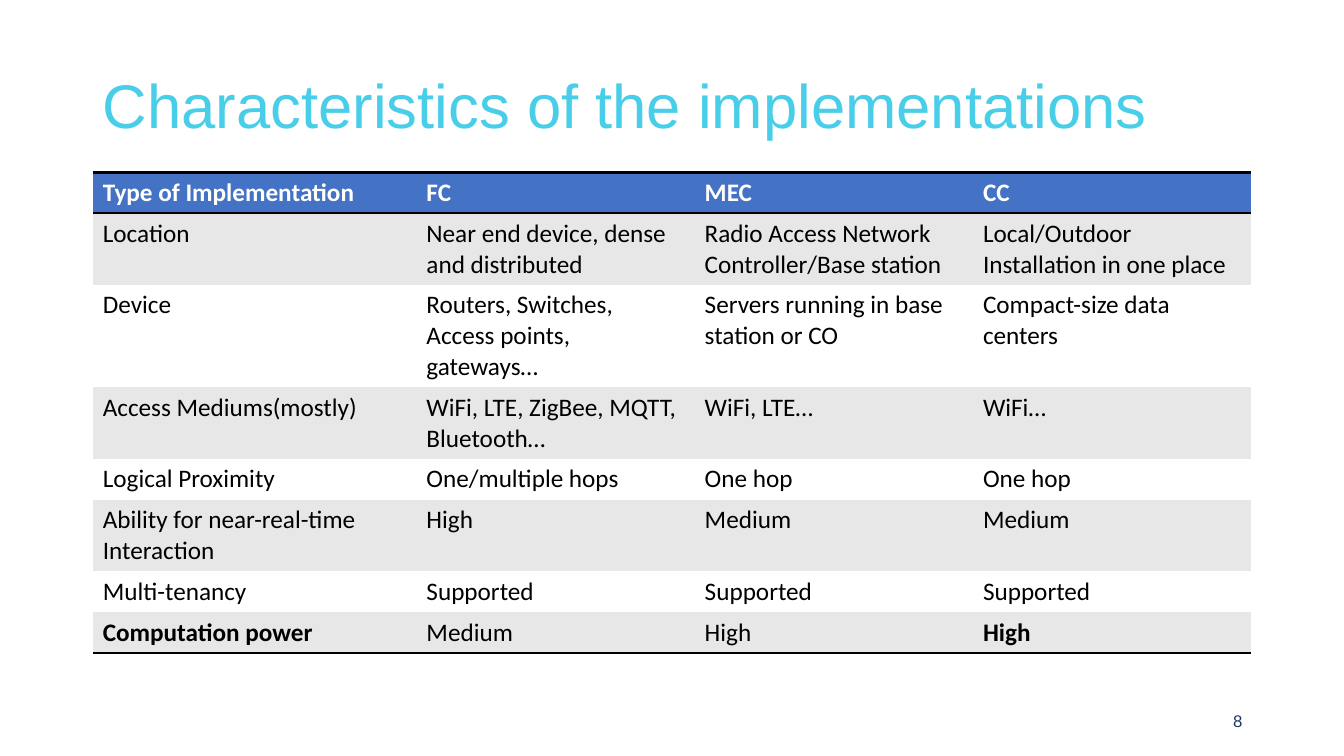
from lxml import etree
from pptx import Presentation
from pptx.dml.color import RGBColor
from pptx.enum.text import MSO_ANCHOR, MSO_AUTO_SIZE, PP_ALIGN
from pptx.oxml.ns import qn
from pptx.util import Inches, Pt

LEFT, RIGHT = PP_ALIGN.LEFT, PP_ALIGN.RIGHT
MIDDLE = MSO_ANCHOR.MIDDLE
NO_FIT = MSO_AUTO_SIZE.NONE
TITLE_ONLY = 5

ROWS = [
    ["Type of Implementation", "FC", "MEC", "CC"],
    ["Location", "Near end device, dense and distributed",
     "Radio Access Network Controller/Base station",
     "Local/Outdoor Installation in one place"],
    ["Device", "Routers, Switches, Access points, gateways…",
     "Servers running in base station or CO", "Compact-size data centers"],
    ["Access Mediums(mostly)", "WiFi, LTE, ZigBee, MQTT, Bluetooth…",
     "WiFi, LTE…", "WiFi…"],
    ["Logical Proximity", "One/multiple hops", "One hop", "One hop"],
    ["Ability for near-real-time Interaction", "High", "Medium", "Medium"],
    ["Multi-tenancy", "Supported", "Supported", "Supported"],
    ["Computation power", "Medium", "High", "High"],
]
COL_WIDTHS = [3.21, 2.76, 2.76, 2.76]
ROW_HEIGHT = 0.4
LAST = len(ROWS) - 1
BOLD_CELLS = {(LAST, 0), (LAST, 3)}
RULED_SIDES = {0: ("T", "B"), 1: ("T",), LAST: ("B",)}


def rgb(value):
    return RGBColor.from_string(value)


def write(tf, text, font="Calibri", size=18, color="000000", bold=False,
          align=LEFT, spacing=1.0):
    p = tf.paragraphs[0]
    p.alignment = align
    p.line_spacing = spacing
    r = p.add_run()
    r.text = text
    r.font.name = font
    r.font.size = Pt(size)
    r.font.bold = bold
    r.font.color.rgb = rgb(color)


class Deck:
    header, band, plain, rule = "4472C4", "E7E7E7", "FFFFFF", "000000"

    def __init__(self):
        self.prs = Presentation()
        self.prs.slide_width = Inches(13.33)
        self.prs.slide_height = Inches(7.5)
        self.s = self.prs.slides.add_slide(self.prs.slide_layouts[TITLE_ONLY])

    def title(self, text, x, y, w, h):
        sp = self.s.shapes.title
        sp.left, sp.top, sp.width, sp.height = map(Inches, (x, y, w, h))
        tf = sp.text_frame
        tf.word_wrap = True
        tf.auto_size = NO_FIT
        tf.vertical_anchor = MIDDLE
        write(tf, text, font="Arial", size=44, color="48CEE9", spacing=0.9)

    def text(self, text, x, y, w, h, **style):
        tf = self.s.shapes.add_textbox(*map(Inches, (x, y, w, h))).text_frame
        tf.word_wrap = True
        tf.vertical_anchor = MIDDLE
        write(tf, text, **style)

    def borders(self, cell, ruled):
        tcPr = cell._tc.get_or_add_tcPr()
        for side in "LRTB":
            ln = etree.SubElement(tcPr, qn(f"a:ln{side}"))
            if side in ruled:
                ln.set("w", str(Pt(2)))
                fill = etree.SubElement(ln, qn("a:solidFill"))
                etree.SubElement(fill, qn("a:srgbClr"), val=self.rule)
            else:
                etree.SubElement(ln, qn("a:noFill"))

    def table(self, rows, x, y, widths, row_height):
        frame = self.s.shapes.add_table(
            len(rows), len(widths), Inches(x), Inches(y),
            Inches(sum(widths)), Inches(row_height * len(rows)))
        tbl = frame.table
        tbl.first_row = tbl.horz_banding = False
        for col, width in zip(tbl.columns, widths):
            col.width = Inches(width)
        for i, row in enumerate(rows):
            is_header = i == 0
            fill = self.header if is_header else (self.plain, self.band)[i % 2]
            for j, text in enumerate(row):
                cell = tbl.cell(i, j)
                self.borders(cell, RULED_SIDES.get(i, ()))
                cell.fill.solid()
                cell.fill.fore_color.rgb = rgb(fill)
                write(cell.text_frame, text,
                      color="FFFFFF" if is_header else "000000",
                      bold=is_header or (i, j) in BOLD_CELLS)


def main():
    deck = Deck()
    deck.title("Characteristics of the implementations", 0.92, 0.35, 11.5, 1.45)
    deck.table(ROWS, 0.92, 1.71, COL_WIDTHS, ROW_HEIGHT)
    deck.text("8", 9.42, 6.95, 3, 0.4, font="Arial", size=12,
              color="203864", align=RIGHT)
    deck.prs.save("out.pptx")


if __name__ == "__main__":
    main()
